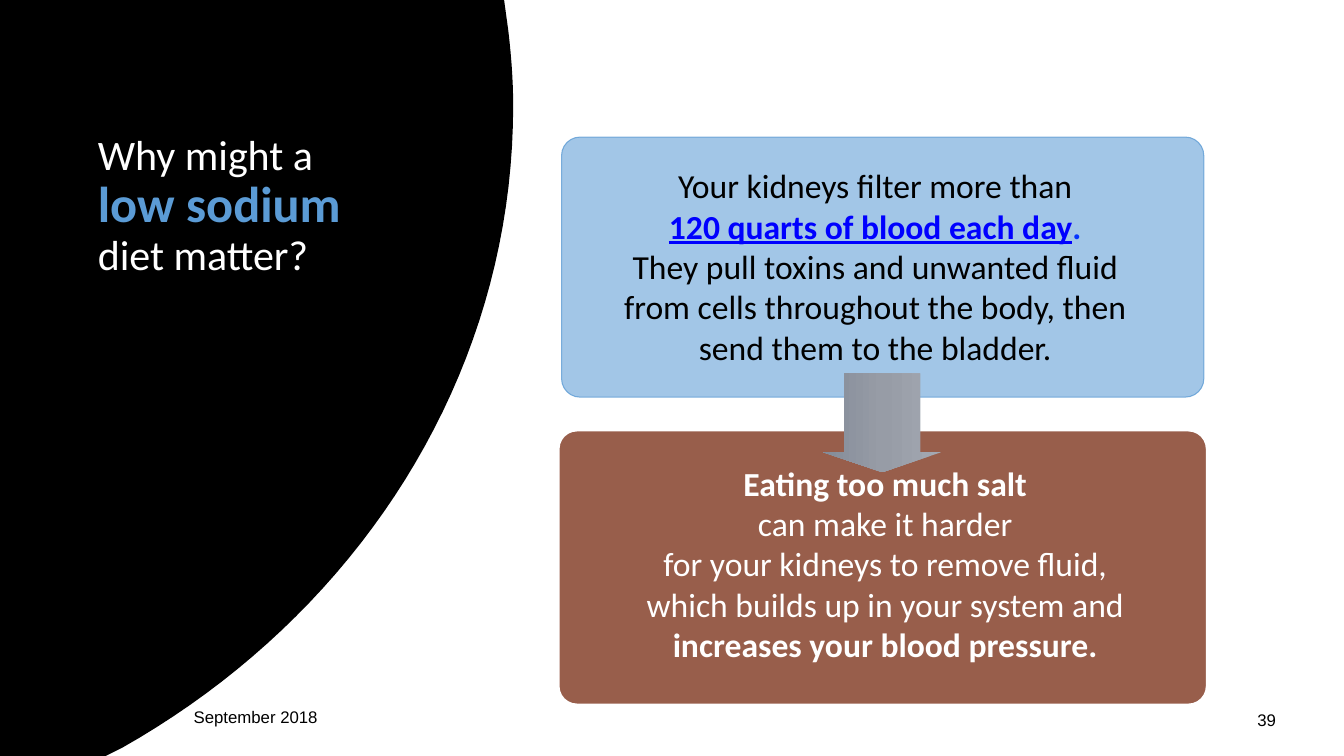
from copy import deepcopy
from dataclasses import dataclass

from lxml.etree import SubElement
from pptx import Presentation
from pptx.dml.color import RGBColor
from pptx.enum.shapes import MSO_SHAPE as Shape
from pptx.enum.text import MSO_ANCHOR as Anchor, MSO_AUTO_SIZE as AutoSize, PP_ALIGN as Align
from pptx.oxml.ns import qn
from pptx.util import Inches, Pt


@dataclass(frozen=True)
class Theme:
    black: str = "000000"
    white: str = "FFFFFF"
    accent: str = "5B9BD5"
    link: str = "0000FF"
    link_end: str = "0433FF"
    kidney_fill: str = "84B4DF"
    kidney_line: str = "5698D3"
    salt_fill: str = "985E4B"
    arrow_stops: tuple = ((0, "A3A8B2"), (0.5, "979CA6"), (1, "848C99"))
    body_font: str = "Calibri"
    footer_font: str = "Arial"
    title_size: int = 30
    emphasis_size: int = 36
    body_size: int = 24
    footer_size: int = 12


THEME = Theme()


def write(para, text, size=THEME.body_size, color=THEME.black, bold=False,
          underline=False, font=THEME.body_font):
    span = para.add_run()
    span.text = text
    span.font.size = Pt(size)
    span.font.name = font
    span.font.bold = bold
    span.font.underline = underline
    span.font.color.rgb = RGBColor.from_string(color)


def place(shape, box):
    shape.left, shape.top, shape.width, shape.height = (Inches(n) for n in box)


def set_frame(frame, anchor=Anchor.TOP, wrap=True):
    frame.word_wrap = wrap
    frame.auto_size = AutoSize.NONE
    frame.vertical_anchor = anchor
    frame.margin_left = frame.margin_right = Inches(0.05)
    frame.margin_top = frame.margin_bottom = Inches(0.05)


def add_text(page, box, paragraphs, align=Align.LEFT, anchor=Anchor.TOP, wrap=True):
    """Each paragraph is a list of (text, format) pairs."""
    frame = page.shapes.add_textbox(*(Inches(n) for n in box)).text_frame
    set_frame(frame, anchor, wrap)
    for index, spans in enumerate(paragraphs):
        para = frame.add_paragraph() if index else frame.paragraphs[0]
        para.alignment = align
        for text, style in spans:
            write(para, text, **style)


def curve(start, first, second, end, steps=40):
    """Points along a cubic curve, without its start."""
    for step in range(1, steps + 1):
        t = step / steps
        u = 1 - t
        yield tuple(u**3 * a + 3 * u * u * t * b + 3 * u * t * t * c + t**3 * d
                    for a, b, c, d in zip(start, first, second, end))


def add_backdrop(page, left, bottom):
    shoulder, widest, foot = (5.04, 0.29), (5.09, 1.05), (1.21, 7.42)
    points = [(5, 0), shoulder,
              *curve(shoulder, (5.07, 0.54), (5.09, 0.8), widest),
              *curve(widest, (5.09, 3.75), (3.53, 6.11), foot),
              (1.05, bottom), (left, bottom)]
    builder = page.shapes.build_freeform(Inches(left), 0)
    builder.add_line_segments([(Inches(x), Inches(y)) for x, y in points], close=True)
    backdrop = builder.convert_to_shape()
    backdrop.shadow.inherit = False
    backdrop.fill.solid()
    backdrop.fill.fore_color.rgb = RGBColor.from_string(THEME.black)
    backdrop.line.fill.background()


def add_title(page, box):
    title = page.shapes.title
    place(title, box)
    set_frame(title.text_frame)
    para = title.text_frame.paragraphs[0]
    para.alignment = Align.LEFT
    para.line_spacing = 0.9
    plain = dict(size=THEME.title_size, color=THEME.white)
    write(para, "Why might a", **plain)
    para.add_line_break()
    write(para, "low sodium", size=THEME.emphasis_size, color=THEME.accent, bold=True)
    para.add_line_break()
    write(para, "diet matter?", **plain)


def add_card(page, box, radius, fill, line, line_width, opacity=100):
    card = page.shapes.add_shape(Shape.ROUNDED_RECTANGLE, *(Inches(n) for n in box))
    card.adjustments[0] = radius
    card.shadow.inherit = False
    card.fill.solid()
    card.fill.fore_color.rgb = RGBColor.from_string(fill)
    card.line.color.rgb = RGBColor.from_string(line)
    card.line.width = Pt(line_width)
    if opacity < 100:
        for color in card._element.spPr.iter(qn("a:srgbClr")):
            SubElement(color, qn("a:alpha"), val=str(opacity * 1000))


def add_arrow(page, box):
    """A right arrow turned to point down; box is its size before the turn."""
    arrow = page.shapes.add_shape(Shape.RIGHT_ARROW, *(Inches(n) for n in box))
    arrow.rotation = 90
    arrow.adjustments[0], arrow.adjustments[1] = 0.64, 0.203
    arrow.shadow.inherit = False
    arrow.line.fill.background()
    arrow.fill.gradient()
    arrow.fill.gradient_angle = 270
    stop_list = arrow._element.spPr.find(".//" + qn("a:gsLst"))
    stop_list.insert(1, deepcopy(stop_list[0]))
    for stop, (position, color) in zip(arrow.fill.gradient_stops, THEME.arrow_stops):
        stop.position = position
        stop.color.rgb = RGBColor.from_string(color)


def add_explanation(page, left, top):
    """Two cards, the arrow between them, and their text above all three."""
    add_card(page, (left + 0.03, top, 6.37, 2.58), 0.071,
             THEME.kidney_fill, THEME.kidney_line, 0.75, opacity=75)
    add_card(page, (left, top + 2.91, 6.43, 2.72), 0.067,
             THEME.salt_fill, THEME.white, 1.5)
    add_arrow(page, (left + 2.72, top + 2.25, 0.98, 1.17))

    centred = dict(align=Align.CENTER, anchor=Anchor.MIDDLE)
    add_text(page, (left + 0.38, top + 0.26, 5.52, 2.04), [
        [("Your kidneys filter more than", {})],
        [("120 quarts of blood each day", dict(color=THEME.link, bold=True, underline=True)),
         (".", dict(color=THEME.link_end, bold=True))],
        [("They pull toxins and unwanted fluid from cells throughout the body, "
          "then send them to the bladder.", {})],
    ], **centred)
    light = dict(color=THEME.white)
    strong = dict(light, bold=True)
    add_text(page, (left + 0.51, top + 3.21, 5.46, 2.04), [
        [("Eating too much salt", strong)],
        [("can make it harder", light)],
        [("for your kidneys to remove fluid,", light)],
        [("which builds up in your system and ", light),
         ("increases your blood pressure.", strong)],
    ], **centred)


def add_footer(page, top):
    style = dict(size=THEME.footer_size, font=THEME.footer_font)
    add_text(page, (1.87, top, 1.82, 0.29), [[("September 2018", style)]])
    add_text(page, (12.42, top + 0.04, 0.3, 0.29), [[("39", style)]],
             anchor=Anchor.MIDDLE, wrap=False)


def main():
    deck = Presentation()
    deck.slide_width, deck.slide_height = Inches(13.33), Inches(7.5)
    page = deck.slides.add_slide(deck.slide_layouts.get_by_name("Title Only"))
    add_backdrop(page, left=-0.15, bottom=7.5)
    # The title is drawn over the backdrop.
    page.shapes._spTree.append(page.shapes.title._element)
    add_title(page, (0.92, 1.28, 4.3, 4.24))
    add_explanation(page, left=5.54, top=1.36)
    add_footer(page, top=6.96)
    deck.save("out.pptx")


if __name__ == "__main__":
    main()
